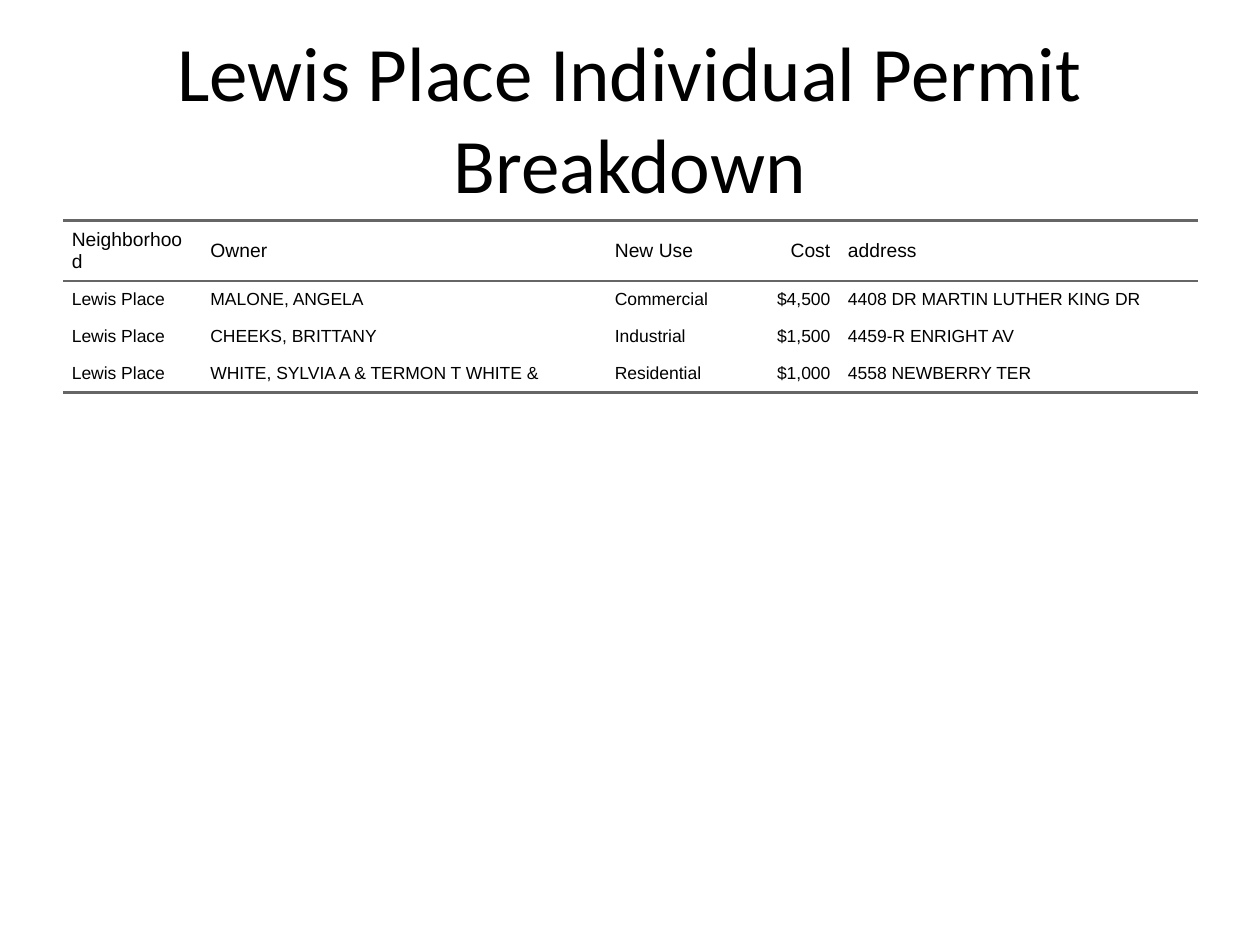
from lxml import etree
from pptx import Presentation
from pptx import util as u
from pptx.dml.color import RGBColor
from pptx.enum import text
from pptx.oxml import ns

COLORS = {"text": "000000", "rule": "666666"}
NO_STYLE = "{2D5ABB26-0587-4C30-8999-92F81FD0307C}"
COLUMN_WIDTHS = [1.1, 3.21, 1.1, 0.75, 2.85]
COST_COLUMN = 3
PERMITS = [
    ["Neighborhood", "Owner", "New Use", "Cost", "address"],
    ["Lewis Place", "MALONE, ANGELA", "Commercial", "$4,500",
     "4408 DR MARTIN LUTHER KING DR"],
    ["Lewis Place", "CHEEKS, BRITTANY", "Industrial", "$1,500",
     "4459-R ENRIGHT AV"],
    ["Lewis Place", "WHITE, SYLVIA A & TERMON T WHITE &", "Residential",
     "$1,000", "4558 NEWBERRY TER"],
]


def write(frame, words, size, font, align=text.PP_ALIGN.LEFT, spacing=0, indent=0):
    """Fill a text frame with one formatted paragraph and return nothing."""
    frame.word_wrap = True
    paragraph = frame.paragraphs[0]
    paragraph.alignment = align
    paragraph.space_before = paragraph.space_after = u.Pt(spacing)
    properties = paragraph._p.get_or_add_pPr()
    for name in ("marL", "marR"):
        properties.set(name, str(u.Inches(indent)))
    properties.set("indent", "0")
    run = paragraph.add_run()
    run.text = words
    run.font.size = u.Pt(size)
    run.font.name = font
    run.font.color.rgb = RGBColor.from_string(COLORS["text"])


def add_rule(cell, side, width=1.5):
    """Draw a horizontal border; side is T or B."""
    line = etree.SubElement(cell._tc.get_or_add_tcPr(), ns.qn(f"a:ln{side}"),
                            w=str(u.Pt(width)))
    fill = etree.SubElement(line, ns.qn("a:solidFill"))
    etree.SubElement(fill, ns.qn("a:srgbClr"), val=COLORS["rule"])


class SlideBuilder:
    title_font = "Calibri"
    table_font = "Arial"
    padding = 0.07

    def __init__(self, presentation):
        self.width = presentation.slide_width
        self.height = presentation.slide_height
        self.slide = presentation.slides.add_slide(presentation.slide_layouts[5])

    def area(self, left, top, width, height):
        """Turn shares of the slide's size into lengths."""
        return (int(left * self.width), int(top * self.height),
                int(width * self.width), int(height * self.height))

    def title(self, words, *shares):
        shape = self.slide.shapes.title
        shape.left, shape.top, shape.width, shape.height = self.area(*shares)
        frame = shape.text_frame
        frame.auto_size = text.MSO_AUTO_SIZE.NONE
        frame.vertical_anchor = text.MSO_ANCHOR.MIDDLE
        write(frame, words, 44, self.title_font, text.PP_ALIGN.CENTER)

    def table(self, rows, widths, *shares, row_height=0.25):
        shape = self.slide.shapes.add_table(len(rows), len(widths), *self.area(*shares))
        shape.element.xpath(".//a:tableStyleId")[0].text = NO_STYLE
        table = shape.table
        table.horz_banding = False
        for column, width in zip(table.columns, widths):
            column.width = u.Inches(width)
        for row_index, values in enumerate(rows):
            table.rows[row_index].height = u.Inches(row_height)
            for column_index, value in enumerate(values):
                self.cell(table.cell(row_index, column_index), value,
                          is_header=row_index == 0,
                          is_last=row_index == len(rows) - 1,
                          is_cost=column_index == COST_COLUMN)

    def cell(self, cell, value, is_header, is_last, is_cost):
        cell.margin_left = cell.margin_right = 0
        cell.margin_top = cell.margin_bottom = u.Inches(self.padding)
        cell.vertical_anchor = text.MSO_ANCHOR.MIDDLE
        if is_header:
            add_rule(cell, "T")
        if is_header or is_last:
            add_rule(cell, "B")
        cell.fill.background()
        write(cell.text_frame, value, 11 if is_header else 10, self.table_font,
              text.PP_ALIGN.RIGHT if is_cost else text.PP_ALIGN.LEFT,
              spacing=5, indent=self.padding)


def main():
    presentation = Presentation()
    presentation.slide_width = u.Inches(10)
    presentation.slide_height = u.Inches(7.5)
    builder = SlideBuilder(presentation)
    builder.title("Lewis Place Individual Permit Breakdown",
                  0.05, 0.3 / 7.5, 0.9, 1.25 / 7.5)
    builder.table(PERMITS, COLUMN_WIDTHS, 0.05, 1.75 / 7.5, 0.9, 1 / 7.5)
    presentation.save("out.pptx")


if __name__ == "__main__":
    main()
